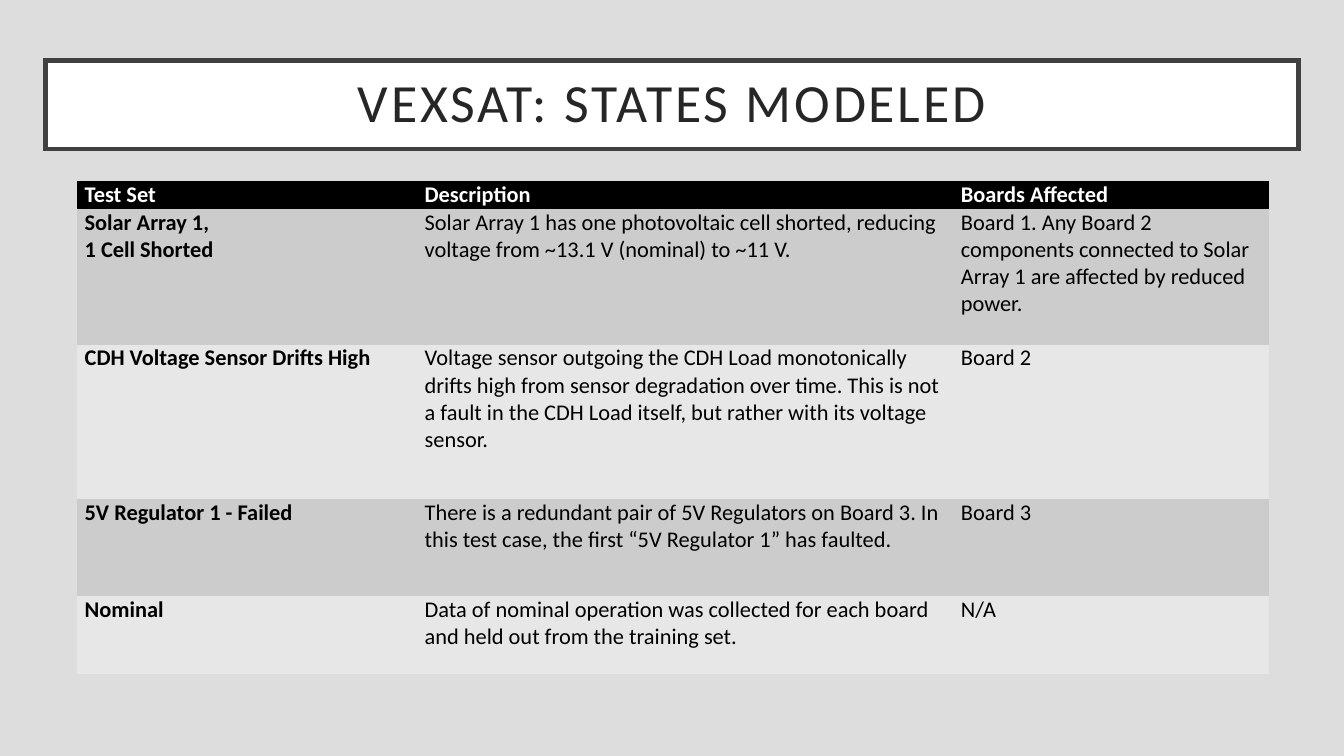
"""Build a slide with a framed title and a table of the modeled test states."""
from dataclasses import dataclass

from lxml.etree import SubElement
from pptx import Presentation
from pptx.dml.color import RGBColor
from pptx.enum.shapes import MSO_SHAPE
from pptx.enum.text import MSO_ANCHOR, PP_ALIGN
from pptx.oxml.ns import qn
from pptx.util import Inches, Pt


@dataclass(frozen=True)
class Theme:
    font: str = "Calibri"
    background: str = "DDDDDD"
    title_fill: str = "FFFFFF"
    title_line: str = "404040"
    title_text: str = "262626"
    header_fill: str = "000000"
    header_text: str = "FFFFFF"
    body_text: str = "000000"
    bands: tuple = ("CCCCCC", "E7E7E7")
    title_size: float = 28.8
    table_size: float = 12


def style_text(text_frame, size, color, bold, alignment):
    for paragraph in text_frame.paragraphs:
        paragraph.alignment = alignment
        for run in paragraph.runs:
            run.font.name = theme.font
            run.font.size = Pt(size)
            run.font.bold = bold
            run.font.color.rgb = RGBColor.from_string(color)


def fill_solid(fill, color):
    fill.solid()
    fill.fore_color.rgb = RGBColor.from_string(color)


theme = Theme()
column_widths = [2.53, 3.99, 2.35]
row_heights = [0.19, 1.01, 1.15, 0.72, 0.58]
rows = [
    ("Test Set ", "Description", "Boards Affected"),
    (
        "Solar Array 1,\n1 Cell Shorted",
        "Solar Array 1 has one photovoltaic cell shorted, reducing voltage "
        "from ~13.1 V (nominal) to ~11 V.",
        "Board 1. Any Board 2 components connected to Solar Array 1 are "
        "affected by reduced power.",
    ),
    (
        "CDH Voltage Sensor Drifts High",
        "Voltage sensor outgoing the CDH Load monotonically drifts high from "
        "sensor degradation over time. This is not a fault in the CDH Load "
        "itself, but rather with its voltage sensor.",
        "Board 2",
    ),
    (
        "5V Regulator 1 - Failed",
        "There is a redundant pair of 5V Regulators on Board 3. In this test "
        "case, the first “5V Regulator 1” has faulted.",
        "Board 3",
    ),
    (
        "Nominal",
        "Data of nominal operation was collected for each board and held out "
        "from the training set.",
        "N/A",
    ),
]

presentation = Presentation()
presentation.slide_width = Inches(10)
presentation.slide_height = Inches(10) * 9 // 16
slide = presentation.slides.add_slide(presentation.slide_layouts[6])
fill_solid(slide.background.fill, theme.background)

title = slide.shapes.add_shape(
    MSO_SHAPE.RECTANGLE, Inches(0.34), Inches(0.45), Inches(9.32), Inches(0.66)
)
title.shadow.inherit = False
fill_solid(title.fill, theme.title_fill)
title.line.color.rgb = RGBColor.from_string(theme.title_line)
title.line.width = Pt(2.5)
SubElement(title._element.spPr.find(qn("a:ln")), qn("a:miter"), lim="800000")
title_frame = title.text_frame
title_frame.text = "VEXSAT: STATES MODELED"
title_frame.word_wrap = True
title_frame.vertical_anchor = MSO_ANCHOR.MIDDLE
title_frame.margin_left = title_frame.margin_right = Inches(0.1)
title_frame.margin_top = title_frame.margin_bottom = Inches(0.1)
style_text(title_frame, theme.title_size, theme.title_text, False, PP_ALIGN.CENTER)
title_paragraph = title_frame.paragraphs[0]
title_paragraph.line_spacing = 0.9
title_paragraph.runs[0].font._element.set("spc", "150")

table = slide.shapes.add_table(
    len(rows), len(column_widths),
    Inches(0.57), Inches(1.35), Inches(sum(column_widths)), Inches(sum(row_heights)),
).table
table._tbl.tblPr.find(qn("a:tableStyleId")).text = "{2D5ABB26-0587-4C30-8999-92F81FD0307C}"
for column, width in zip(table.columns, column_widths):
    column.width = Inches(width)
for row, height in zip(table.rows, row_heights):
    row.height = Inches(height)

for row_index, texts in enumerate(rows):
    is_header = row_index == 0
    fill_color = theme.header_fill if is_header else theme.bands[(row_index - 1) % 2]
    text_color = theme.header_text if is_header else theme.body_text
    alignment = PP_ALIGN.JUSTIFY if is_header else PP_ALIGN.LEFT
    for column_index, text in enumerate(texts):
        cell = table.cell(row_index, column_index)
        cell.text_frame.text = text
        cell.margin_left = cell.margin_right = Inches(0.06)
        cell.margin_top = cell.margin_bottom = Inches(0)
        fill_solid(cell.fill, fill_color)
        bold = is_header or column_index == 0
        style_text(cell.text_frame, theme.table_size, text_color, bold, alignment)

presentation.save("out.pptx")
